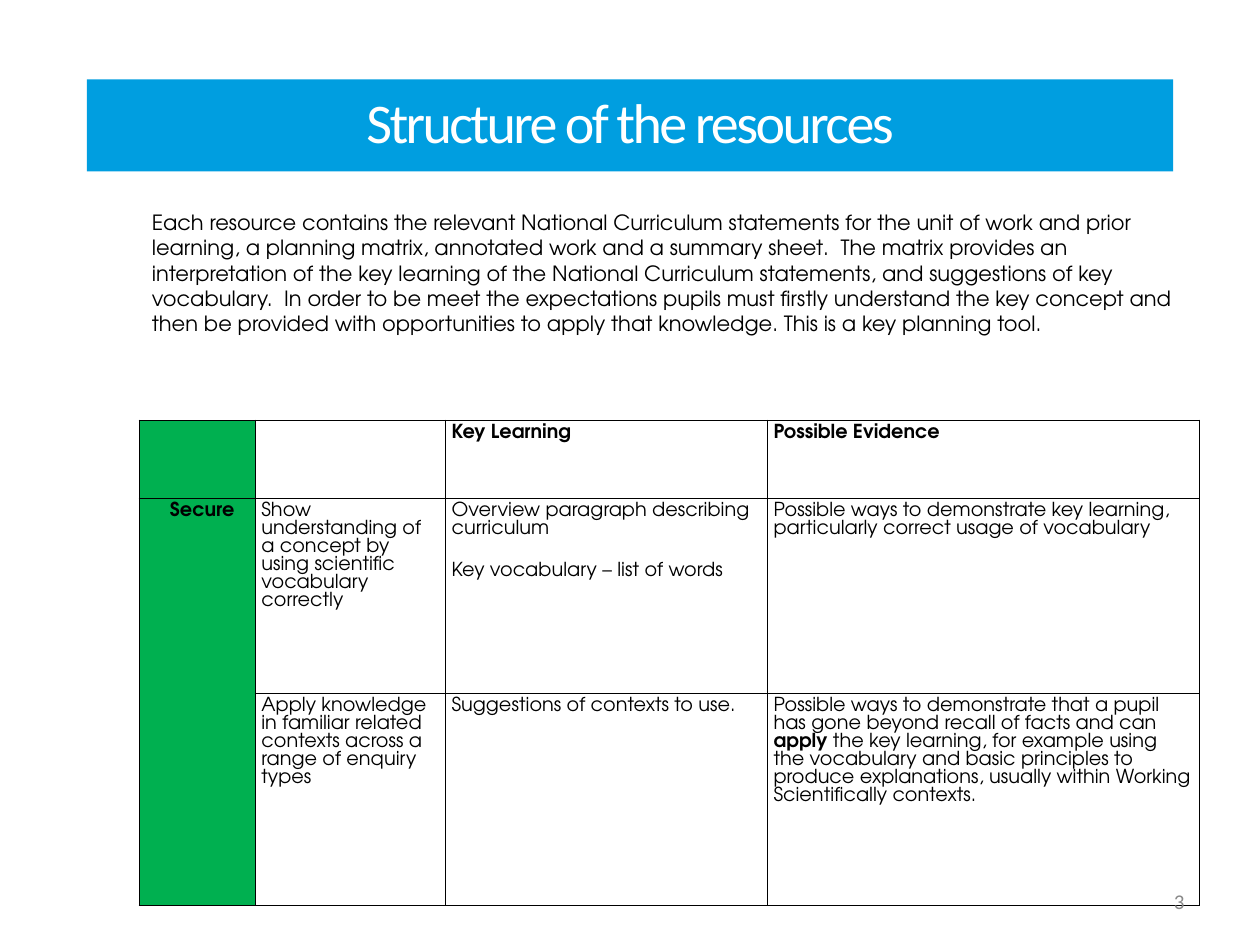
from lxml import etree
from pptx import Presentation
from pptx.dml.color import RGBColor
from pptx.enum.text import MSO_ANCHOR, MSO_AUTO_SIZE, PP_ALIGN
from pptx.oxml.ns import qn
from pptx.util import Inches, Pt

TOP, MID = MSO_ANCHOR.TOP, MSO_ANCHOR.MIDDLE
LEFT, MIDDLE, RIGHT = PP_ALIGN.LEFT, PP_ALIGN.CENTER, PP_ALIGN.RIGHT
FIXED = MSO_AUTO_SIZE.NONE

SANS, GEO = "Calibri", "TeX Gyre Adventor"
BLUE, GREEN, WHITE, BLACK, GREY = "009EE0", "00B050", "FFFFFF", "000000", "898989"
COLS, ROWS = 100, 75  # grid units across and down the slide

TITLE = "Structure of the resources"
INTRO = (
    "Each resource contains the relevant National Curriculum statements for the unit "
    "of work and prior learning, a planning matrix, annotated work and a summary sheet. "
    " The matrix provides an interpretation of the key learning of the National "
    "Curriculum statements, and suggestions of key vocabulary.  In order to be meet the "
    "expectations pupils must firstly understand the key concept and then be provided "
    "with opportunities to apply that knowledge. This is a key planning tool."
)

# Each cell is a list of paragraphs, each paragraph a list of (text, bold) runs
MATRIX = [
    [[], [], [[("Key Learning", True)]], [[("Possible Evidence", True)]]],
    [
        [[("Secure", True)]],
        [[("Show understanding of a concept by using scientific vocabulary correctly", False)]],
        [
            [("Overview paragraph describing curriculum", False)],
            [("Key vocabulary – list of words", False)],
        ],
        [[("Possible ways to demonstrate key learning, particularly correct usage "
           "of vocabulary", False)]],
    ],
    [
        [],
        [[("Apply knowledge in familiar related contexts across a range of enquiry "
           "types", False)]],
        [[("Suggestions of contexts to use.", False)]],
        [[
            ("Possible ways to demonstrate that a pupil has gone beyond recall of facts "
             "and can ", False),
            ("apply", True),
            (" the key learning, for example using the vocabulary and basic principles to "
             "produce explanations, usually within Working Scientifically contexts.", False),
        ]],
    ],
]


def tint(code):
    return RGBColor.from_string(code)


def put(item, form):
    for name, value in form.items():
        setattr(item, name, value)


class Deck:
    cell_form = {
        "margin_left": Inches(0.05), "margin_right": Inches(0.05),
        "margin_top": Inches(0.03), "margin_bottom": Inches(0.03),
        "vertical_anchor": TOP,
    }

    def __init__(self):
        self.file = Presentation()
        self.file.slide_width, self.file.slide_height = Inches(10), Inches(7.5)
        self.slide = self.file.slides.add_slide(self.file.slide_layouts[1])

    def x(self, cols):
        return round(self.file.slide_width * cols / COLS)

    def y(self, rows):
        return round(self.file.slide_height * rows / ROWS)

    def box(self, left, top, wide, high):
        return self.x(left), self.y(top), self.x(wide), self.y(high)

    def place(self, shape, area):
        put(shape, dict(zip(("left", "top", "width", "height"), self.box(*area))))

    def run(self, para, text, size, face, ink, bold=False):
        run = para.add_run()
        run.text = text
        put(run.font, {"size": Pt(size), "name": face, "bold": bold})
        run.font.color.rgb = tint(ink)
        return run

    def fill(self, shape, text, size, face, ink, frame, para):
        put(shape.text_frame, {"word_wrap": True, "auto_size": FIXED, **frame})
        line = shape.text_frame.paragraphs[0]
        put(line, para)
        return self.run(line, text, size, face, ink)

    def title(self, text, area):
        shape = self.slide.shapes.title
        self.place(shape, area)
        shape.fill.solid()
        shape.fill.fore_color.rgb = tint(BLUE)
        run = self.fill(shape, text, 32, SANS, WHITE, {"vertical_anchor": MID},
                        {"alignment": MIDDLE, "line_spacing": 0.9})
        run.font._element.set("spc", "-150")

    def body(self, text, area):
        shape = self.slide.placeholders[1]
        self.place(shape, area)
        self.fill(shape, text, 12, GEO, BLACK, {"vertical_anchor": TOP},
                  {"alignment": LEFT, "space_before": Pt(0)})
        props = shape.text_frame.paragraphs[0]._p.get_or_add_pPr()
        props.set("marL", "0")
        props.set("indent", "0")
        etree.SubElement(props, qn("a:buNone"))

    def label(self, text, area):
        shape = self.slide.shapes.add_textbox(*self.box(*area))
        self.fill(shape, text, 12, SANS, GREY, {"vertical_anchor": MID},
                  {"alignment": RIGHT})

    def edge(self, cell):
        props = cell._tc.get_or_add_tcPr()
        for side in ("lnL", "lnR", "lnT", "lnB"):
            line = etree.SubElement(props, qn("a:" + side), w=str(Pt(0.75)))
            paint = etree.SubElement(line, qn("a:solidFill"))
            etree.SubElement(paint, qn("a:srgbClr"), val=BLACK)

    def cell(self, cell, paras, back):
        put(cell, self.cell_form)
        self.edge(cell)
        cell.fill.solid()
        cell.fill.fore_color.rgb = tint(back)
        frame = cell.text_frame
        for i, runs in enumerate(paras):
            para = frame.add_paragraph() if i else frame.paragraphs[0]
            para.space_before = Pt(13.7 if i else 0)
            for text, bold in runs:
                self.run(para, text, 11, GEO, BLACK, bold)

    def table(self, data, left, top, wides, highs):
        area = self.box(left, top, sum(wides), sum(highs))
        table = self.slide.shapes.add_table(len(highs), len(wides), *area).table
        put(table, {"first_row": False, "horz_banding": False})
        for col, wide in zip(table.columns, wides):
            col.width = self.x(wide)
        for row, high in zip(table.rows, highs):
            row.height = self.y(high)
        for r, line in enumerate(data):
            for c, paras in enumerate(line):
                self.cell(table.cell(r, c), paras, WHITE if c else GREEN)
        return table


def main():
    deck = Deck()

    # Heading and introduction
    deck.title(TITLE, (6.9, 6.3, 86.2, 7.3))
    deck.body(INTRO, (11.05, 16.15, 84.2, 14.2))

    # Planning matrix, with one level spanning both lower rows
    table = deck.table(MATRIX, 11.05, 33.35, (9.2, 15.1, 25.55, 34.3), (6.2, 15.5, 16.8))
    level = table.cell(1, 0)
    level.merge(table.cell(2, 0))
    para = level.text_frame.paragraphs[0]
    para.alignment = MIDDLE
    para._p.get_or_add_pPr().set("marL", str(Inches(0.08)))

    # Page number
    deck.label("3", (71.7, 69.5, 23.3, 4))

    deck.file.save("out.pptx")


if __name__ == "__main__":
    main()
